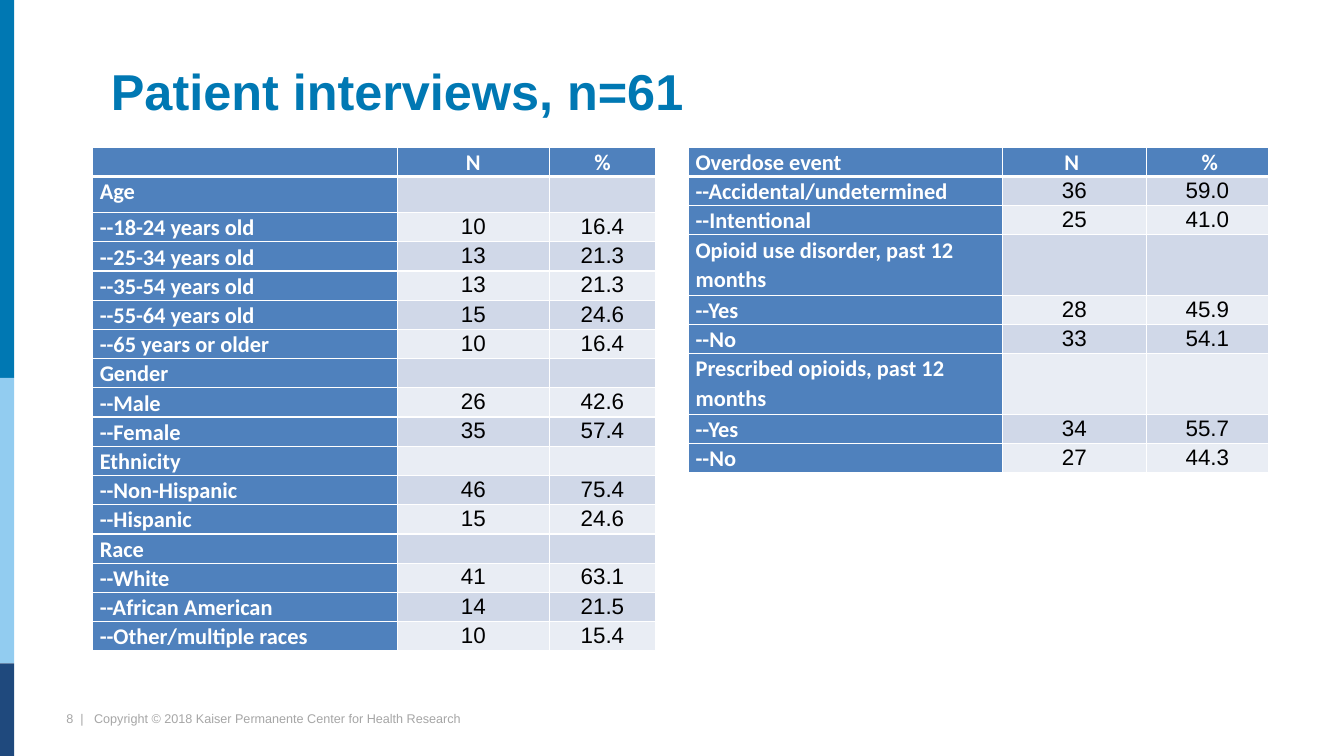
from lxml import etree
from pptx import Presentation
from pptx.dml.color import RGBColor
from pptx.enum.shapes import MSO_SHAPE
from pptx.enum.text import MSO_ANCHOR, MSO_AUTO_SIZE, PP_ALIGN
from pptx.oxml import parse_xml
from pptx.oxml.ns import nsdecls, qn
from pptx.util import Inches, Pt

LEFT, CENTER = PP_ALIGN.LEFT, PP_ALIGN.CENTER
RECTANGLE = MSO_SHAPE.RECTANGLE
BRAND_BLUE, WHITE, BLACK = "0078B3", "FFFFFF", "000000"
HEADER_FILL, BANDS = "4F81BD", ("E9EDF4", "D0D8E8")
ROW_HEIGHT, TABLE_TOP = 0.29, 1.46


def write(frame, text, size=16, font="Arial", color=BLACK, bold=False,
          align=LEFT, spacing=None):
    paragraph = frame.paragraphs[0]
    paragraph.alignment = align
    if spacing:
        paragraph.line_spacing = spacing
    if not text:
        # An empty cell still needs a text size, or its row grows
        etree.SubElement(paragraph._p, qn("a:endParaRPr"), sz=str(size * 100))
        return
    run = paragraph.add_run()
    run.text = text
    run.font.size = Pt(size)
    run.font.name = font
    run.font.bold = bold
    run.font.color.rgb = RGBColor.from_string(color)


def add_borders(cell, bottom_width):
    widths = {"lnL": 1, "lnR": 1, "lnT": 1, "lnB": bottom_width}
    for side, width in widths.items():
        cell._tc.get_or_add_tcPr().append(parse_xml(
            f'<a:{side} {nsdecls("a")} w="{Pt(width)}"><a:solidFill>'
            f'<a:srgbClr val="{WHITE}"/></a:solidFill></a:{side}>'))


prs = Presentation()
prs.slide_width, prs.slide_height = Inches(13.33), Inches(7.5)
slide = prs.slides.add_slide(prs.slide_layouts[5])

# Footer and the coloured strip along the left edge
footer = slide.shapes.add_textbox(Inches(0.56), Inches(7), Inches(4.23), Inches(0.25))
footer.text_frame.word_wrap = False
write(footer.text_frame, "8  |   Copyright © 2018 Kaiser Permanente Center for Health Research",
      size=9, color="A6A6A6")

strip_top = 0
for height, color in [(3.75, BRAND_BLUE), (2.83, "92CCF0"), (0.92, "1F497D")]:
    band = slide.shapes.add_shape(RECTANGLE, 0, Inches(strip_top), Inches(0.14), Inches(height))
    band.fill.solid()
    band.fill.fore_color.rgb = RGBColor.from_string(color)
    band.line.fill.background()
    band.shadow.inherit = False
    strip_top += height

title = slide.shapes.title
title.left, title.top = Inches(1), Inches(0.25)
title.width, title.height = Inches(11.67), Inches(1)
title.text_frame.vertical_anchor = MSO_ANCHOR.BOTTOM
title.text_frame.auto_size = MSO_AUTO_SIZE.NONE
write(title.text_frame, "Patient interviews, n=61", size=36, color=BRAND_BLUE,
      bold=True, spacing=Pt(33))

demographics = [
    ("", "N", "%"),
    ("Age", "", ""),
    ("--18-24 years old", "10", "16.4"),
    ("--25-34 years old", "13", "21.3"),
    ("--35-54 years old", "13", "21.3"),
    ("--55-64 years old", "15", "24.6"),
    ("--65 years or older", "10", "16.4"),
    ("Gender", "", ""),
    ("--Male", "26", "42.6"),
    ("--Female", "35", "57.4"),
    ("Ethnicity", "", ""),
    ("--Non-Hispanic", "46", "75.4"),
    ("--Hispanic", "15", "24.6"),
    ("Race", "", ""),
    ("--White", "41", "63.1"),
    ("--African American", "14", "21.5"),
    ("--Other/multiple races", "10", "15.4"),
]
opioid_history = [
    ("Overdose event", "N ", " %"),
    ("--Accidental/undetermined", "36", "59.0"),
    ("--Intentional", "25", "41.0"),
    ("Opioid use disorder, past 12 months", "", ""),
    ("--Yes", "28", "45.9"),
    ("--No", "33", "54.1"),
    ("Prescribed opioids, past 12 months", "", ""),
    ("--Yes", "34", "55.7"),
    ("--No", "27", "44.3"),
]

# Left edge, column widths, heights of the taller rows, contents
tables = [
    (0.92, (3.02, 1.51, 1.05), {1: 0.36}, demographics),
    (6.83, (3.11, 1.43, 1.21), {3: 0.6, 6: 0.6}, opioid_history),
]
for left, widths, tall_rows, records in tables:
    heights = [tall_rows.get(r, ROW_HEIGHT) for r in range(len(records))]
    table = slide.shapes.add_table(
        len(records), len(widths), Inches(left), Inches(TABLE_TOP),
        Inches(sum(widths)), Inches(sum(heights))).table
    for column, width in zip(table.columns, widths):
        column.width = Inches(width)
    for r, (record, height) in enumerate(zip(records, heights)):
        table.rows[r].height = Inches(height)
        for c, value in enumerate(record):
            cell = table.cell(r, c)
            is_heading = r == 0 or c == 0
            cell.margin_left = cell.margin_right = Inches(0.07)
            cell.margin_top = cell.margin_bottom = 0
            add_borders(cell, bottom_width=3 if r == 0 else 1)
            cell.fill.solid()
            cell.fill.fore_color.rgb = RGBColor.from_string(
                HEADER_FILL if is_heading else BANDS[r % 2])
            write(cell.text_frame, value, font="Calibri" if is_heading else "Arial",
                  color=WHITE if is_heading else BLACK, bold=is_heading,
                  align=CENTER if c else LEFT, spacing=1.07)

prs.save("out.pptx")
